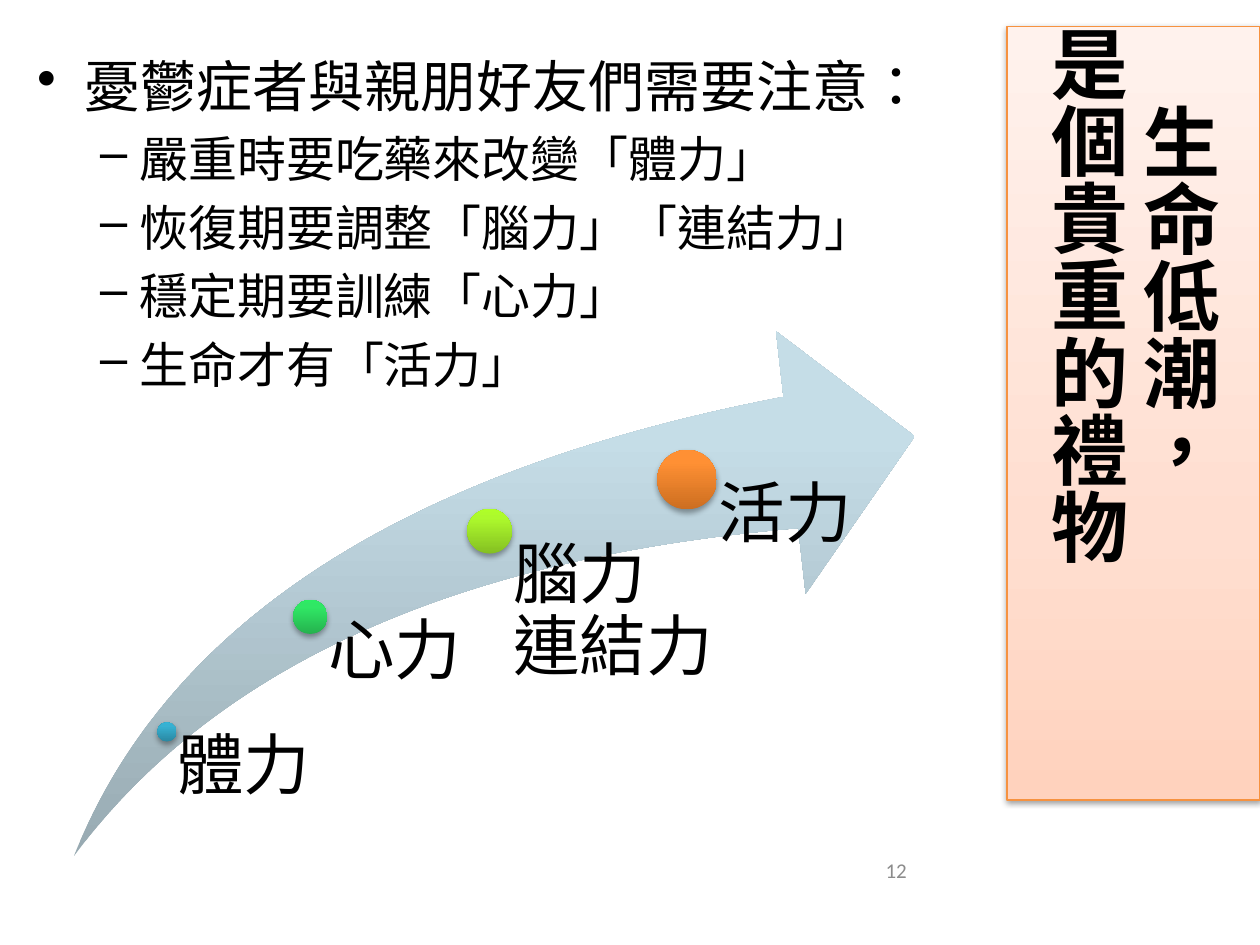
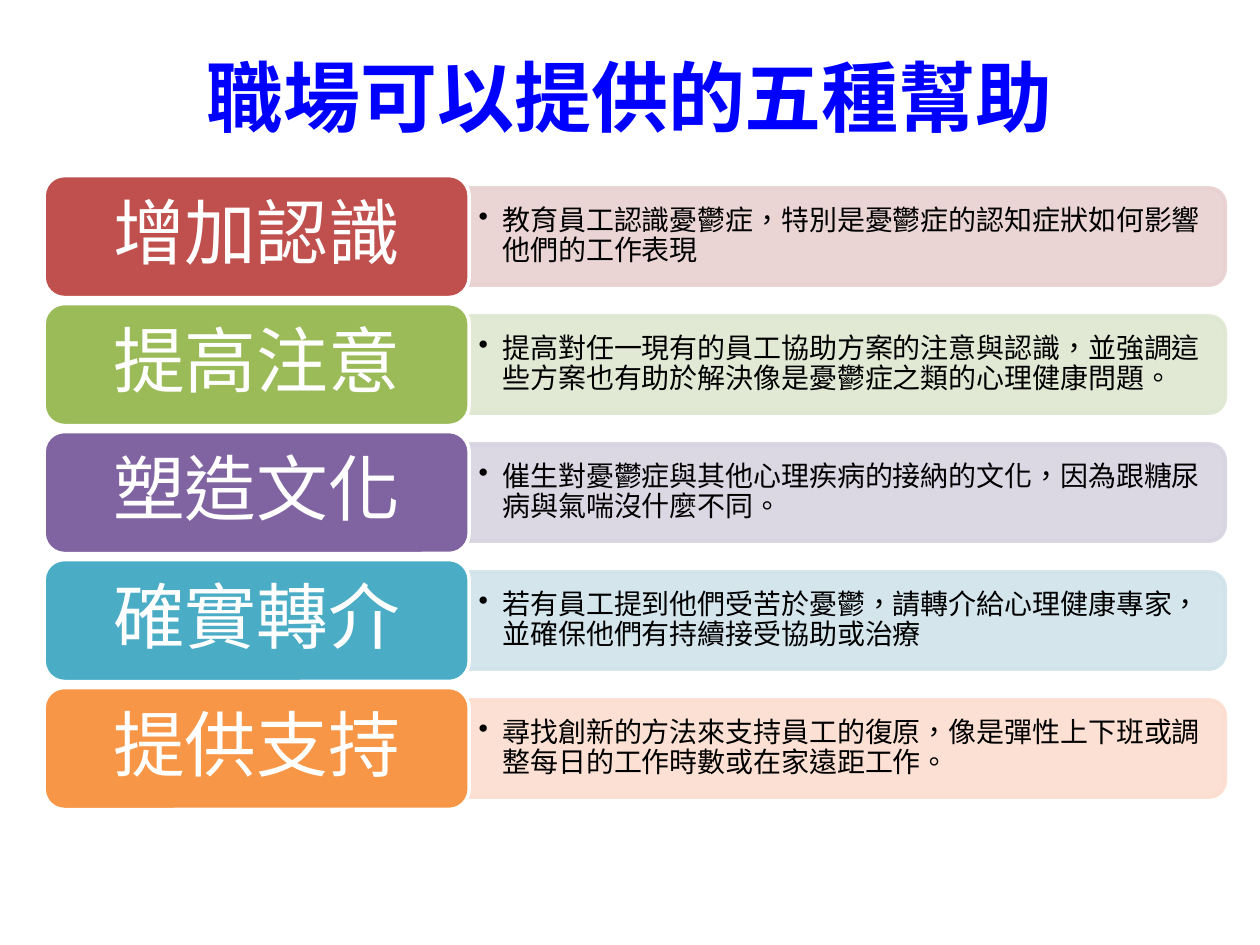
import pptx
import pptx.util
import pptx.dml.color
import pptx.enum.shapes
import pptx.enum.text
import pptx.oxml.ns
from lxml import etree

Cm, Pt = pptx.util.Cm, pptx.util.Pt
RGBColor = pptx.dml.color.RGBColor
Shape = pptx.enum.shapes.MSO_SHAPE
Align, Anchor = pptx.enum.text.PP_ALIGN, pptx.enum.text.MSO_ANCHOR
qn = pptx.oxml.ns.qn

BLACK = RGBColor(0x00, 0x00, 0x00)
WHITE = RGBColor(0xFF, 0xFF, 0xFF)
GREY = RGBColor(0x8C, 0x8C, 0x8C)
BLUE = RGBColor(0x00, 0x00, 0xFF)
ORANGE = RGBColor(0xF6, 0x92, 0x40)
PEACH = [(0, RGBColor(0xFF, 0xD2, 0xBD)), (35, RGBColor(0xFF, 0xDE, 0xD0)),
         (100, RGBColor(0xFF, 0xF2, 0xED))]
STEEL = [(0, RGBColor(0x98, 0xAA, 0xB2)), (80, RGBColor(0xC5, 0xDD, 0xE7)),
         (100, RGBColor(0xC6, 0xDE, 0xE9))]
TEAL = [(0, RGBColor(0x2A, 0x88, 0xA2)), (80, RGBColor(0x37, 0xB1, 0xD2)),
        (100, RGBColor(0x34, 0xB4, 0xD6))]
GREEN = [(0, RGBColor(0x25, 0xB2, 0x4E)), (80, RGBColor(0x30, 0xE7, 0x65)),
         (100, RGBColor(0x2D, 0xEB, 0x64))]
LIME = [(0, RGBColor(0x85, 0xC0, 0x22)), (80, RGBColor(0xAD, 0xF9, 0x2C)),
        (100, RGBColor(0xAF, 0xFE, 0x28))]
AMBER = [(0, RGBColor(0xCC, 0x6E, 0x20)), (80, RGBColor(0xFF, 0x90, 0x34)),
         (100, RGBColor(0xFF, 0x91, 0x36))]
FONT = "Calibri"
SANS = "Noto Sans CJK SC"


def write(box, text, size=44, color=BLACK, font=FONT, bold=False, align=Align.LEFT,
          anchor=Anchor.TOP, inset=(0.25, 0.13, 0.25, 0.13), space=None,
          bullet=None, left=0, hang=0, gap=0, more=False):
    """Fill the box with one paragraph, or add one to it when more is set."""
    frame = box.text_frame
    frame.word_wrap = True
    frame.vertical_anchor = anchor
    frame.margin_left, frame.margin_top, frame.margin_right, frame.margin_bottom = map(Cm, inset)
    para = frame.add_paragraph() if more else frame.paragraphs[0]
    para.alignment = align
    if space:
        para.line_spacing = space
    if gap:
        para.space_before = Pt(gap)
    if bullet:
        props = para._p.get_or_add_pPr()
        props.set("marL", str(Cm(left)))
        props.set("indent", str(-Cm(hang)))
        etree.SubElement(props, qn("a:buChar"), char=bullet)
    for row, line in enumerate(text.split("\n")):
        if row:
            para.add_line_break()
        run = para.add_run()
        run.text = line
        run.font.size, run.font.bold, run.font.name = Pt(size), bold, font
        run.font.color.rgb = color
        mark = run._r.get_or_add_rPr()
        mark.set("lang", "zh-TW")
        mark.find(qn("a:latin")).addnext(etree.Element(qn("a:ea"), typeface=FONT))


def shade(shape, stops, shadow=0, drop=0):
    """Blend the stops from bottom to top; shadow is its opacity in percent."""
    shape.fill.gradient()
    shape.fill.gradient_angle = 90
    shape.line.fill.background()
    shape.shadow.inherit = False
    props = shape._element.spPr
    ramp = props.find(qn("a:gradFill")).find(qn("a:gsLst"))
    for old in list(ramp):
        ramp.remove(old)
    for place, color in stops:
        stop = etree.SubElement(ramp, qn("a:gs"), pos=str(place * 1000))
        etree.SubElement(stop, qn("a:srgbClr"), val=str(color))
    if shadow:
        outer = etree.SubElement(props.find(qn("a:effectLst")), qn("a:outerShdw"),
                                 blurRad="40000", dist=str(Pt(drop)), dir="5400000",
                                 rotWithShape="0")
        tint = etree.SubElement(outer, qn("a:srgbClr"), val=str(BLACK))
        etree.SubElement(tint, qn("a:alpha"), val=str(shadow * 1000))


deck = pptx.Presentation()
deck.slide_width, deck.slide_height = Cm(25.4), Cm(19.05)
blank = deck.slide_layouts[6]

# Slide 1: the rising arrow
shapes = deck.slides.add_slide(blank).shapes
panel = shapes.add_shape(Shape.RECTANGLE, Cm(20.3), Cm(0.53), Cm(5.1), Cm(15.6))
shade(panel, PEACH, shadow=38, drop=1.6)
panel.line.color.rgb = ORANGE
panel.line.width = Pt(0.75)
title = shapes.add_textbox(Cm(20.3), Cm(0.53), Cm(5.1), Cm(11.1))
write(title, "生命低潮，\n是個貴重的禮物", bold=True, align=Align.CENTER,
      anchor=Anchor.MIDDLE, inset=(0, 0, 0, 0))
title.text_frame._txBody.bodyPr.set("vert", "eaVert")

body = shapes.add_textbox(Cm(0.5), Cm(0.91), Cm(17.84), Cm(7.4))
write(body, "憂鬱症者與親朋好友們需要注意：", size=32, bullet="•", left=0.95, hang=0.95)
for point in ("嚴重時要吃藥來改變「體力」", "恢復期要調整「腦力」「連結力」",
              "穩定期要訓練「心力」", "生命才有「活力」"):
    write(body, point, size=28, font=SANS, bullet="–", left=2.06, hang=0.79, gap=5.6, more=True)

page = shapes.add_textbox(Cm(12.6), Cm(17.04), Cm(5.93), Cm(1.02))
write(page, "12", size=12, color=GREY, align=Align.RIGHT, anchor=Anchor.MIDDLE)

arrow = shapes.add_shape(Shape.SWOOSH_ARROW, Cm(1.49), Cm(6.68), Cm(16.95), Cm(10.58))
arrow.adjustments[0] = arrow.adjustments[1] = 0.25
shade(arrow, STEEL)
floor = 17.25
for name, x, y, size, width, drop, stops in (
        ("體力", 3.17, 14.56, 0.39, 2.9, 0, TEAL),
        ("心力", 5.91, 12.09, 0.69, 3.56, 0, GREEN),
        ("腦力\n連結力", 9.42, 10.26, 0.9, 5.28, 0.2, LIME),
        ("活力", 13.25, 9.07, 1.2, 3.56, 0, AMBER)):
    dot = shapes.add_shape(Shape.OVAL, Cm(x), Cm(y), Cm(size), Cm(size))
    shade(dot, stops, shadow=35, drop=1.8)
    top = y + size / 2 + drop
    label = shapes.add_textbox(Cm(x + size / 2), Cm(top), Cm(width), Cm(floor - top))
    write(label, name, size=38, inset=(0.53 * size, 0, 0, 0), space=0.9)

# Slide 2: five kinds of help
shapes = deck.slides.add_slide(blank).shapes
title = shapes.add_textbox(Cm(1.27), Cm(0.33), Cm(22.86), Cm(3.18))
write(title, "職場可以提供的五種幫助", color=BLUE, bold=True, align=Align.CENTER,
      anchor=Anchor.MIDDLE)

helps = (
    ("增加認識", RGBColor(0xC0, 0x50, 0x4D), RGBColor(0xE8, 0xD0, 0xD0),
     "教育員工認識憂鬱症，特別是憂鬱症的認知症狀如何影響他們的工作表現"),
    ("提高注意", RGBColor(0x9B, 0xBB, 0x59), RGBColor(0xDE, 0xE7, 0xD1),
     "提高對任一現有的員工協助方案的注意與認識，並強調這些方案也有助於解決像是憂鬱症之類的心理健康問題。"),
    ("塑造文化", RGBColor(0x80, 0x64, 0xA2), RGBColor(0xD8, 0xD3, 0xE0),
     "催生對憂鬱症與其他心理疾病的接納的文化，因為跟糖尿病與氣喘沒什麼不同。"),
    ("確實轉介", RGBColor(0x4B, 0xAC, 0xC6), RGBColor(0xD0, 0xE3, 0xEA),
     "若有員工提到他們受苦於憂鬱，請轉介給心理健康專家，並確保他們有持續接受協助或治療"),
    ("提供支持", RGBColor(0xF7, 0x96, 0x46), RGBColor(0xFC, 0xDD, 0xCF),
     "尋找創新的方法來支持員工的復原，像是彈性上下班或調整每日的工作時數或在家遠距工作。"),
)
pitch, high, long, thick = 2.58, 2.46, 15.24, 1.96
for row, (name, color, pale, detail) in enumerate(helps):
    mid = 4.77 + row * pitch
    # The bar is drawn upright and turned a quarter about its centre
    bar = shapes.add_shape(Shape.ROUND_2_SAME_RECTANGLE, Cm(17.08 - thick / 2),
                           Cm(mid - long / 2), Cm(thick), Cm(long))
    bar.rotation = 90
    tag = shapes.add_shape(Shape.ROUNDED_RECTANGLE, Cm(0.89), Cm(mid - high / 2),
                           Cm(8.57), Cm(high))
    for shape, fill, edge in ((bar, pale, pale), (tag, color, WHITE)):
        shape.shadow.inherit = False
        shape.fill.solid()
        shape.fill.fore_color.rgb = fill
        shape.line.color.rgb = edge
        shape.line.width = Pt(2)
    for tint in bar._element.spPr.iter(qn("a:srgbClr")):
        etree.SubElement(tint, qn("a:alpha"), val="90000")
    write(tag, name, size=41, color=WHITE, align=Align.CENTER, anchor=Anchor.MIDDLE,
          inset=(0.55, 0.35, 0.55, 0.35), space=0.9)
    note = shapes.add_textbox(Cm(9.47), Cm(mid - 0.89), Cm(15.14), Cm(1.78))
    write(note, detail, size=16, anchor=Anchor.MIDDLE, inset=(0.18, 0.08, 0.18, 0.08),
          space=0.9, bullet="•", left=0.48, hang=0.48)

deck.save("out.pptx")
